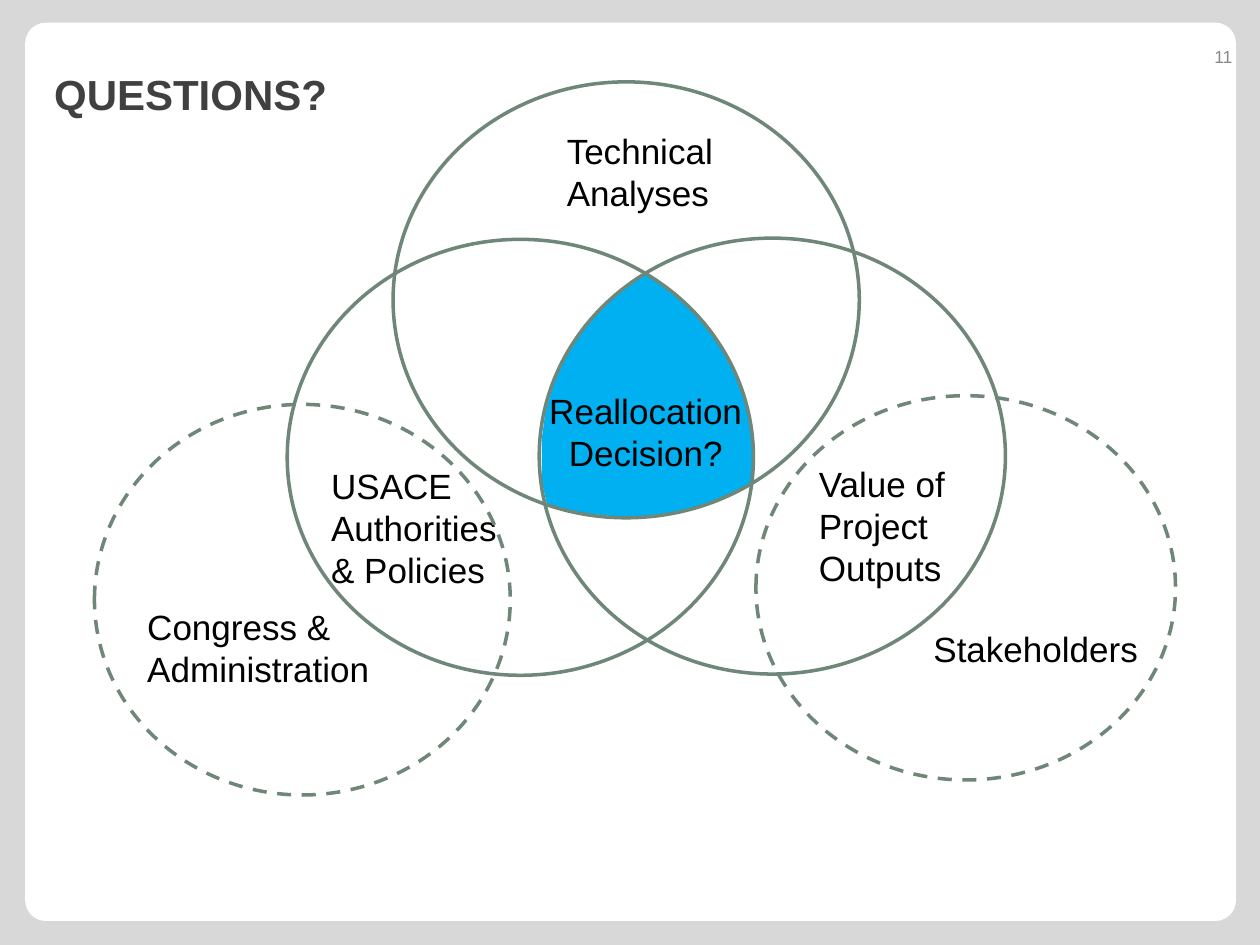
from pptx import Presentation
from pptx.dml.color import RGBColor
from pptx.enum.dml import MSO_LINE as Dash
from pptx.enum.shapes import MSO_SHAPE as Shape
from pptx.enum.text import MSO_ANCHOR as Anchor, MSO_AUTO_SIZE as Fit, PP_ALIGN as Align
from pptx.util import Inches, Pt


def color(code):
    return RGBColor.from_string(code)


class Deck:
    font = "Arial"
    ink, ring, core, panel, back = "000000", "6E8778", "00B0F0", "FFFFFF", "D8D8D8"

    def __init__(self):
        self.prs = Presentation()
        self.prs.slide_width, self.prs.slide_height = Inches(10), Inches(7.5)
        self.slide = self.prs.slides.add_slide(self.prs.slide_layouts[5])
        self.shapes = self.slide.shapes
        fill = self.slide.background.fill
        fill.solid()
        fill.fore_color.rgb = color(self.back)

    def paint(self, shape, code):
        shape.shadow.inherit = False
        shape.fill.solid()
        shape.fill.fore_color.rgb = color(code)
        shape.line.fill.background()

    def letter(self, shape, text, size, code, align=Align.LEFT, bold=False):
        shape.text_frame.text = text
        style = {"name": self.font, "size": Pt(size), "bold": bold}
        for para in shape.text_frame.paragraphs:
            para.alignment = align
            for key, value in style.items():
                setattr(para.font, key, value)
            para.font.color.rgb = color(code)

    def frame(self, *box):
        card = self.shapes.add_shape(Shape.ROUNDED_RECTANGLE, *map(Inches, box))
        card.adjustments[0] = 0.023
        self.paint(card, self.panel)
        # Place the panel behind the title
        self.shapes.title._element.addprevious(card._element)

    def title(self, text, *box):
        head = self.shapes.title
        for key, value in zip(("left", "top", "width", "height"), box):
            setattr(head, key, Inches(value))
        self.letter(head, text, 24, "404040", bold=True)
        head.text_frame.auto_size = Fit.NONE
        head.text_frame.vertical_anchor = Anchor.MIDDLE

    def number(self, text, *box):
        note = self.shapes.add_textbox(*map(Inches, box))
        self.letter(note, text, 10, "898989", Align.RIGHT)
        note.text_frame.word_wrap = True
        note.text_frame.vertical_anchor = Anchor.MIDDLE

    def label(self, text, *box, align=Align.LEFT):
        note = self.shapes.add_textbox(*map(Inches, box))
        self.letter(note, text, 20, self.ink, align)
        note.text_frame.word_wrap = False
        note.text_frame.auto_size = Fit.SHAPE_TO_FIT_TEXT

    def circle(self, *box, dash=None):
        oval = self.shapes.add_shape(Shape.OVAL, *map(Inches, box))
        oval.shadow.inherit = False
        oval.fill.background()
        oval.line.color.rgb = color(self.ring)
        oval.line.width = Pt(2)
        if dash:
            oval.line.dash_style = dash

    def area(self, points):
        start, *rest = [(Inches(x), Inches(y)) for x, y in points]
        shape = self.shapes.build_freeform(*start)
        shape.add_line_segments(rest, close=True)
        self.paint(shape.convert_to_shape(), self.core)


def main():
    deck = Deck()

    # Frame, title and page number
    deck.frame(0.2, 0.18, 9.61, 7.13)
    deck.title("QUESTIONS?", 0.33, 0.3, 9.17, 0.88)
    deck.number("11", 9.08, 0.25, 0.8, 0.4)

    # Shared core of the three circles
    deck.area([
        (4.89, 4.1), (4.59, 4.07), (4.34, 4), (4.3, 3.82), (4.3, 3.7),
        (4.3, 3.48), (4.33, 3.26), (4.42, 2.96), (4.52, 2.77), (4.62, 2.62),
        (4.77, 2.43), (4.97, 2.27), (5.13, 2.17), (5.23, 2.24), (5.37, 2.33),
        (5.52, 2.47), (5.64, 2.61), (5.76, 2.8), (5.85, 2.98), (5.94, 3.25),
        (5.99, 3.53), (5.98, 3.83), (5.8, 3.93), (5.55, 4.03), (5.19, 4.1),
    ])

    # Main circles
    for left, top in ((3.12, 0.65), (4.28, 1.89), (2.28, 1.9)):
        deck.circle(left, top, 3.7, 3.46)

    # Labels (\v is a line break, \n a new paragraph)
    deck.label("Technical\nAnalyses", 4.4, 0.98, 1.37, 0.77)
    deck.label("Value of\vProject \vOutputs", 6.4, 3.62, 1.21, 1.11)
    deck.label("USACE\vAuthorities\v& Policies", 2.53, 3.64, 1.53, 1.11)
    deck.label("Congress &\nAdministration", 1.07, 4.76, 1.98, 0.77)
    deck.label("Stakeholders", 7.31, 4.93, 1.84, 0.44)

    # Outer dashed circles
    deck.circle(0.75, 3.21, 3.3, 3.1, dash=Dash.DASH)
    deck.circle(6, 3.14, 3.33, 3.05, dash=Dash.DASH)

    # Core label
    deck.label("Reallocation\vDecision?", 4.25, 3.04, 1.75, 0.77, align=Align.CENTER)

    deck.prs.save("out.pptx")


if __name__ == "__main__":
    main()
